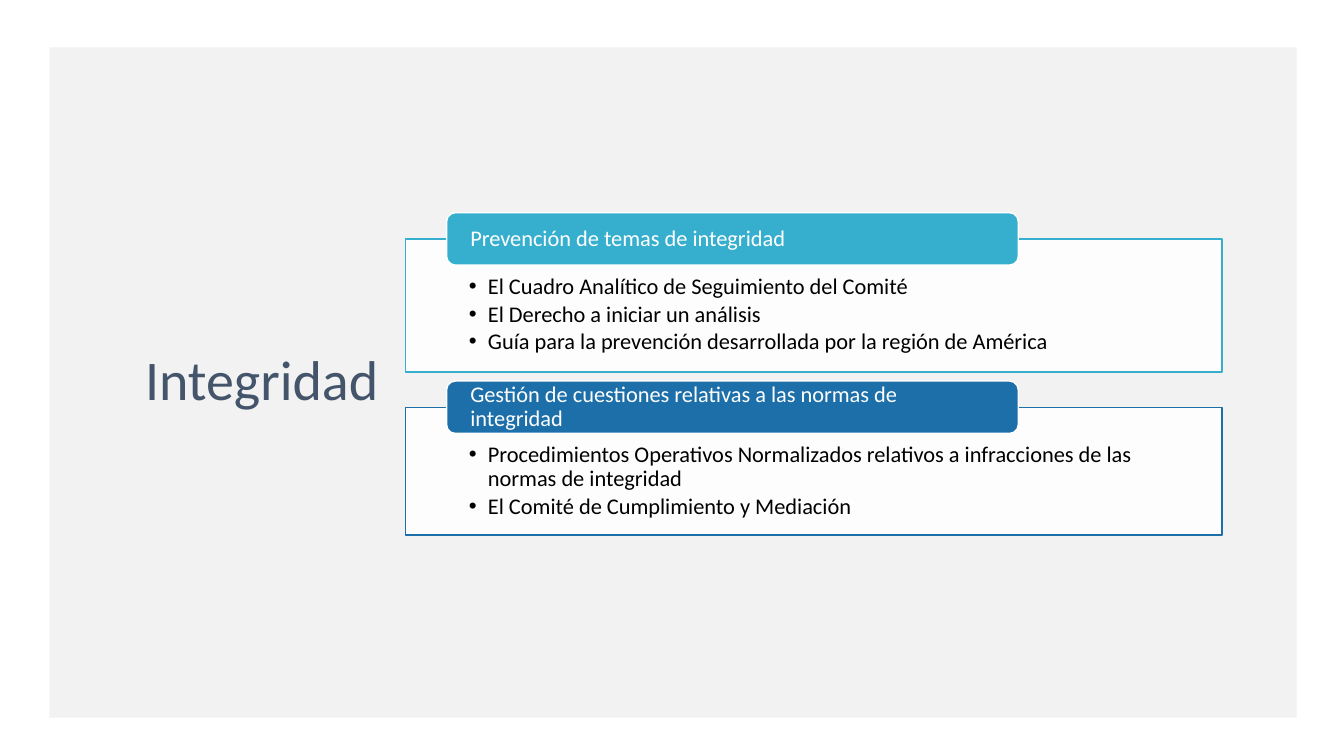
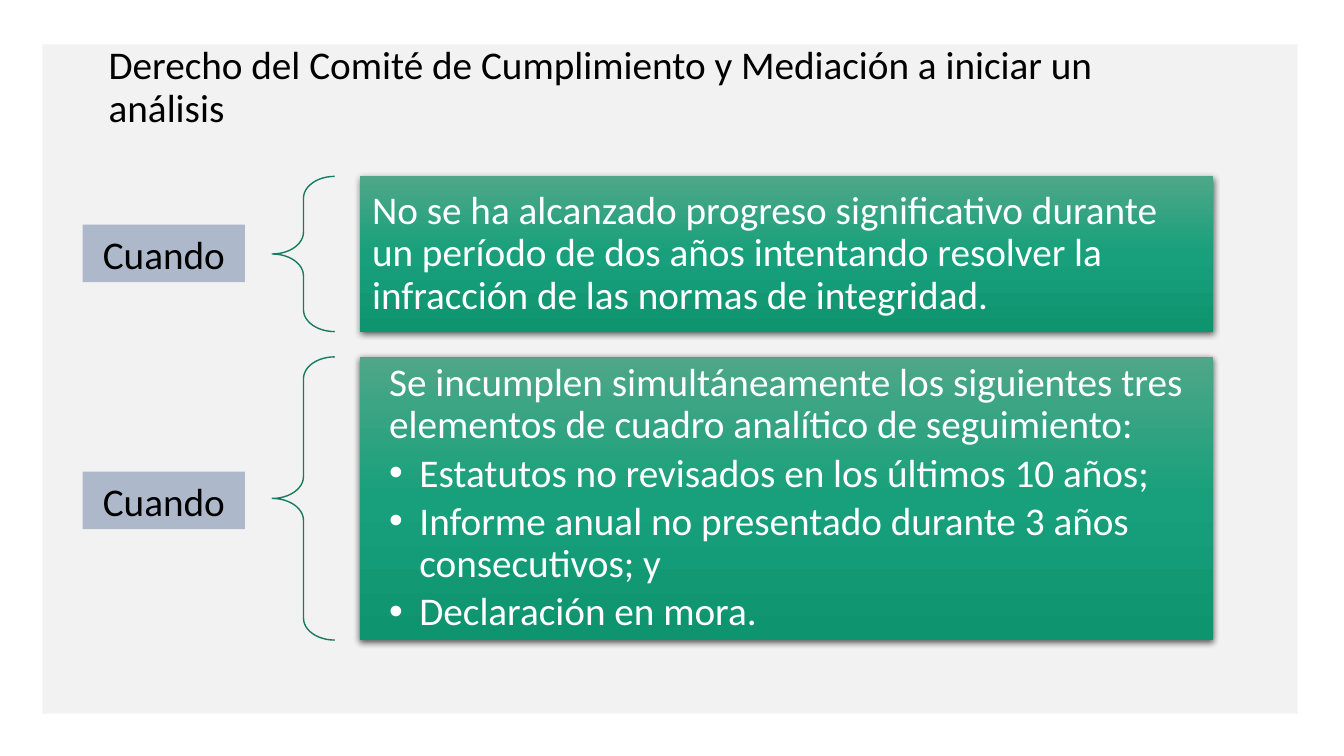
from copy import deepcopy
from dataclasses import dataclass
from typing import Optional

from pptx import Presentation
from pptx.dml.color import RGBColor
from pptx.enum.shapes import MSO_SHAPE
from pptx.enum.text import MSO_ANCHOR, PP_ALIGN
from pptx.oxml.ns import qn
from pptx.oxml.xmlchemy import OxmlElement
from pptx.util import Inches, Pt


@dataclass(frozen=True)
class Theme:
    font: str = "Calibri"
    band: str = "F2F2F2"
    white: str = "FFFFFF"
    black: str = "000000"
    slate: str = "44546A"
    cyan: str = "36AFCE"
    blue: str = "1D6FA9"
    tag: str = "ADB9CA"
    brace: str = "177B60"
    greens: tuple = ("4EA788", "17A07B", "0F9470")
    small: int = 16
    body: int = 28
    large: int = 40


THEME = Theme()


@dataclass(frozen=True)
class Area:
    left: float
    top: float
    width: float
    height: float

    def lengths(self) -> tuple:
        return tuple(Inches(v) for v in (self.left, self.top, self.width, self.height))


@dataclass(frozen=True)
class Line:
    text: str
    indent: float = 0
    hanging: float = 0  # a hanging line carries a bullet


@dataclass(frozen=True)
class Topic:
    heading: str
    color: str
    top: float
    height: float
    points: tuple


@dataclass(frozen=True)
class Condition:
    top: float
    height: float
    tag_top: float
    inset: float
    lines: tuple


# Shared drawing functions
def add_child(parent, tag: str, **attributes):
    child = OxmlElement(tag)
    for name, value in attributes.items():
        child.set(name, str(value))
    parent.append(child)
    return child


def write(box, lines: tuple, *, size: int, color: str, align=PP_ALIGN.LEFT,
          anchor=MSO_ANCHOR.MIDDLE, insets: tuple = (0.1, 0.05, 0.1, 0.05),
          spacing: float = 0.9, after: float = 0) -> None:
    """Fill a box with lines; after is a share of the type size."""
    frame = box.text_frame
    frame.word_wrap = True
    frame.vertical_anchor = anchor
    (frame.margin_left, frame.margin_top,
     frame.margin_right, frame.margin_bottom) = (Inches(v) for v in insets)
    for index, line in enumerate(lines):
        para = frame.add_paragraph() if index else frame.paragraphs[0]
        para.alignment = align
        para.line_spacing = spacing
        para.space_after = Pt(size * after)
        span = para.add_run()
        span.text = line.text
        span.font.name = THEME.font
        span.font.size = Pt(size)
        span.font.color.rgb = RGBColor.from_string(color)
        properties = para._p.get_or_add_pPr()
        properties.set("marL", str(Inches(line.indent)))
        properties.set("indent", str(Inches(-line.hanging)))
        if line.hanging:
            add_child(properties, "a:buFont", typeface="Arial")
            add_child(properties, "a:buChar", char="•")


def add_box(page, area: Area, *, kind=MSO_SHAPE.RECTANGLE, fill: Optional[str] = None,
            opacity: int = 100, line: Optional[str] = None):
    box = page.shapes.add_shape(kind, *area.lengths())
    box.shadow.inherit = False
    if fill:
        box.fill.solid()
        box.fill.fore_color.rgb = RGBColor.from_string(fill)
        if opacity < 100:
            add_child(box._element.spPr.find(".//" + qn("a:srgbClr")),
                      "a:alpha", val=opacity * 1000)
    else:
        box.fill.background()
    if line:
        box.line.color.rgb = RGBColor.from_string(line)
        box.line.width = Pt(1)
    else:
        box.line.fill.background()
    return box


def add_title(page, area: Area, text: str, **text_format) -> None:
    box = page.shapes.add_textbox(*area.lengths())
    write(box, (Line(text),), **text_format)


def add_page(deck, band: Area):
    page = deck.slides.add_slide(deck.slide_layouts[6])
    add_box(page, band, fill=THEME.band)
    return page


# Slide 1: topics with a heading tab
def draw_topic(page, topic: Topic) -> None:
    panel = add_box(page, Area(4.02, topic.top, 8.1, topic.height),
                    fill=THEME.white, opacity=90, line=topic.color)
    write(panel, tuple(Line(point, 0.19, 0.19) for point in topic.points),
          size=THEME.small, color=THEME.black, anchor=MSO_ANCHOR.TOP,
          insets=(0.63, 0.36, 0.63, 0.12), after=0.15)
    tab = add_box(page, Area(4.43, topic.top - 0.26, 5.67, 0.52),
                  kind=MSO_SHAPE.ROUNDED_RECTANGLE, fill=topic.color, line=THEME.white)
    write(tab, (Line(topic.heading),), size=THEME.small, color=THEME.white,
          insets=(0.21, 0, 0.21, 0))


def build_integrity(deck) -> None:
    page = add_page(deck, Area(0.49, 0.47, 12.37, 6.65))
    topics = (
        Topic("Prevención de temas de integridad", THEME.cyan, 2.37, 1.32, (
            "El Cuadro Analítico de Seguimiento del Comité",
            "El Derecho a iniciar un análisis",
            "Guía para la prevención desarrollada por la región de América")),
        Topic("Gestión de cuestiones relativas a las normas de integridad",
              THEME.blue, 4.04, 1.27, (
                  "Procedimientos Operativos Normalizados relativos a "
                  "infracciones de las normas de integridad",
                  "El Comité de Cumplimiento y Mediación")),
    )
    for topic in topics:
        draw_topic(page, topic)
    add_title(page, Area(1.17, 1.5, 2.85, 4.58), "Integridad", size=THEME.large,
              color=THEME.slate, align=PP_ALIGN.CENTER,
              insets=(0.07, 0.04, 0.07, 0.04))


# Slide 2: conditions with a brace and a tag
def shade(box) -> None:
    """Give a box the green gradient and a soft shadow below."""
    box.fill.gradient()
    box.fill.gradient_angle = 270
    properties = box._element.spPr
    stop_list = properties.find(".//" + qn("a:gsLst"))
    stop_list.append(deepcopy(stop_list[-1]))
    for stop, color, position in zip(box.fill.gradient_stops, THEME.greens, (0, 0.5, 1)):
        stop.color.rgb = RGBColor.from_string(color)
        stop.position = position
    shadow = add_child(properties.find(qn("a:effectLst")), "a:outerShdw",
                       blurRad=Pt(4.5), dist=Pt(1.5), dir=90 * 60000,
                       algn="ctr", rotWithShape=0)
    color = add_child(shadow, "a:srgbClr", val=THEME.black)
    add_child(color, "a:alpha", val=63000)


def draw_condition(page, condition: Condition) -> None:
    brace = add_box(page, Area(2.7, condition.top, 0.62, condition.height),
                    kind=MSO_SHAPE.LEFT_BRACE, line=THEME.brace)
    brace.adjustments[0] = 0.35
    panel = add_box(page, Area(3.57, condition.top, 8.46, condition.height))
    shade(panel)
    write(panel, condition.lines, size=THEME.body, color=THEME.white,
          insets=(condition.inset,) * 4, after=0.15)
    tag = add_box(page, Area(0.82, condition.tag_top, 1.61, 0.57), fill=THEME.tag)
    write(tag, (Line("Cuando"),), size=THEME.body, color=THEME.black,
          align=PP_ALIGN.CENTER, spacing=1.0)


def build_right_to_analyse(deck) -> None:
    page = add_page(deck, Area(0.42, 0.44, 12.45, 6.64))
    add_title(page, Area(0.98, 0.15, 11.16, 1.45),
              "Derecho del Comité de Cumplimiento y Mediación a iniciar un análisis",
              size=THEME.body, color=THEME.black)
    elements = (
        "Estatutos no revisados en los últimos 10 años;",
        "Informe anual no presentado durante 3 años consecutivos; y",
        "Declaración en mora.",
    )
    conditions = (
        Condition(1.75, 1.54, 2.23, 0.12, (
            Line("No se ha alcanzado progreso significativo durante un período de dos "
                 "años intentando resolver la infracción de las normas de integridad."),)),
        Condition(3.54, 2.81, 4.68, 0, (
            Line("Se incumplen simultáneamente los siguientes tres elementos de "
                 "cuadro analítico de seguimiento:", 0.29),
            *(Line(element, 0.59, 0.3) for element in elements))),
    )
    for condition in conditions:
        draw_condition(page, condition)


def main() -> None:
    deck = Presentation()
    deck.slide_width, deck.slide_height = Inches(13.33), Inches(7.5)
    build_integrity(deck)
    build_right_to_analyse(deck)
    deck.save("out.pptx")


if __name__ == "__main__":
    main()
